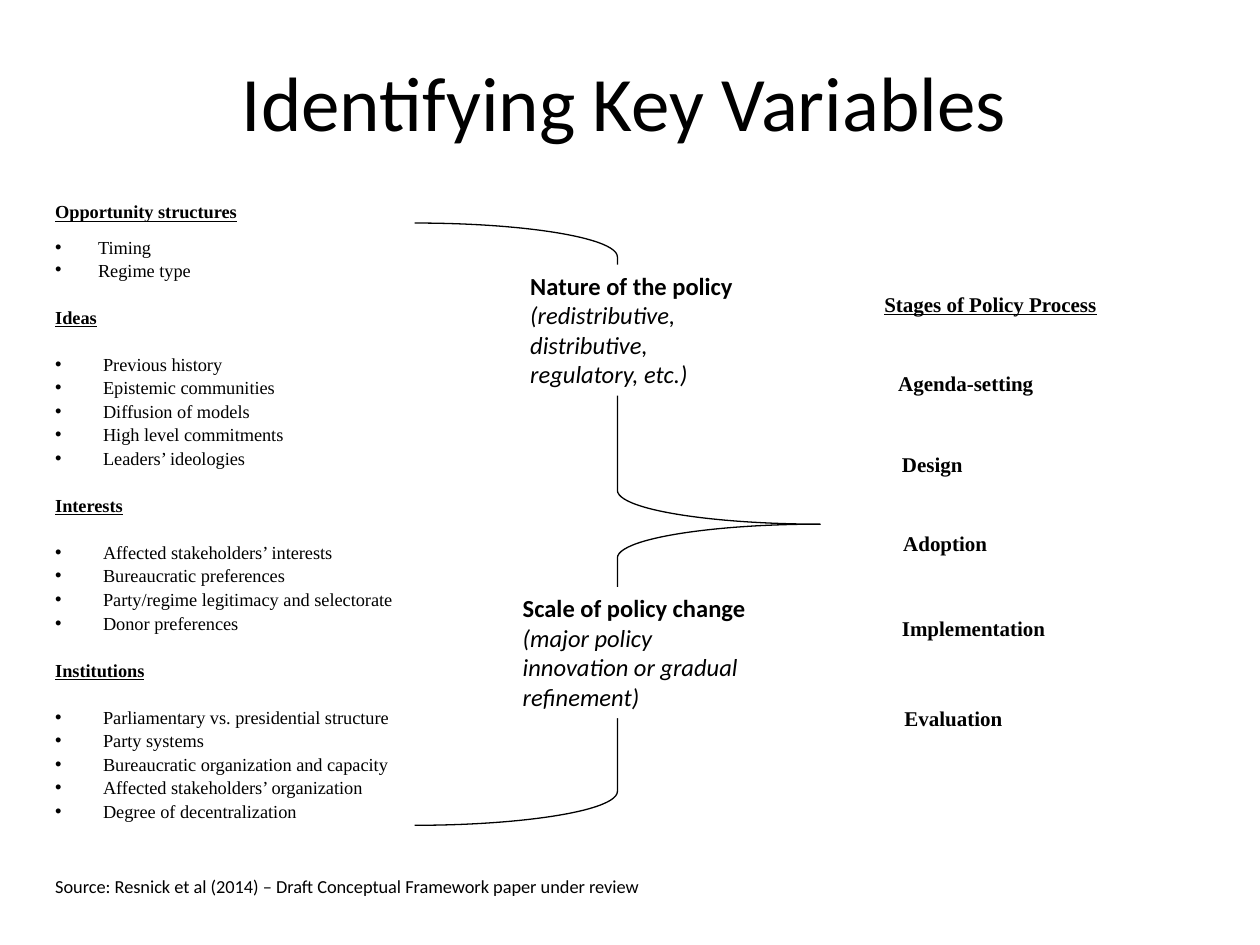
from dataclasses import dataclass

from lxml.etree import SubElement
from pptx import Presentation
from pptx.dml.color import RGBColor
from pptx.enum.shapes import MSO_SHAPE
from pptx.enum.text import MSO_ANCHOR, PP_ALIGN
from pptx.oxml.ns import qn
from pptx.util import Inches, Pt


@dataclass(frozen=True)
class Theme:
    ink: RGBColor = RGBColor(0, 0, 0)
    paper: RGBColor = RGBColor(255, 255, 255)
    sans: str = "Calibri"
    serif: str = "Times New Roman"
    title: float = 44
    callout: float = 14
    stage: float = 12
    body: float = 10.5
    hairline: float = 0.75
    leading: float = 1.07
    gap: float = 8
    blank_line: float = 13.4


class SlideBuilder:
    def __init__(self, slide, theme):
        self.slide = slide
        self.theme = theme

    def text_box(self, left, top, width, height, anchor=MSO_ANCHOR.TOP):
        box = self.slide.shapes.add_textbox(
            Inches(left), Inches(top), Inches(width), Inches(height))
        frame = box.text_frame
        frame.word_wrap = True
        frame.vertical_anchor = anchor
        return frame

    def panel(self, left, top, width, height):
        rect = self.slide.shapes.add_shape(
            MSO_SHAPE.RECTANGLE,
            Inches(left), Inches(top), Inches(width), Inches(height))
        rect.shadow.inherit = False
        rect.fill.solid()
        rect.fill.fore_color.rgb = self.theme.paper
        rect.line.fill.background()
        rect.text_frame.word_wrap = True
        rect.text_frame.vertical_anchor = MSO_ANCHOR.TOP
        return rect.text_frame

    def brace(self, left, top, width, height):
        brace = self.slide.shapes.add_shape(
            MSO_SHAPE.RIGHT_BRACE,
            Inches(left), Inches(top), Inches(width), Inches(height))
        brace.shadow.inherit = False
        brace.fill.background()
        brace.line.color.rgb = self.theme.ink
        brace.line.width = Pt(self.theme.hairline)

    def paragraph(self, frame, text, size, font, align=PP_ALIGN.LEFT, leading=None,
                  before=0, after=0, bold=False, italic=False, underline=False):
        first = frame.paragraphs[0]
        para = frame.add_paragraph() if first.runs else first
        para.alignment = align
        if leading:
            para.line_spacing = leading
        para.space_before = Pt(before)
        para.space_after = Pt(after)
        run = para.add_run()
        run.text = text
        run.font.size = Pt(size)
        run.font.name = font
        run.font.bold = bold
        run.font.italic = italic
        run.font.underline = underline
        run.font.color.rgb = self.theme.ink
        return para

    def bullet(self, frame, text, indent, leading=None, after=0):
        para = self.paragraph(frame, text, self.theme.body, self.theme.serif,
                              leading=leading, after=after)
        props = para._p.get_or_add_pPr()
        props.set("marL", str(Inches(indent)))
        props.set("indent", str(-Inches(indent)))
        SubElement(props, qn("a:buFont"), typeface="Arial")
        SubElement(props, qn("a:buChar"), char="•")

    def stage(self, text, left, top, width, height, underline=False):
        self.paragraph(self.panel(left, top, width, height), text,
                       self.theme.stage, self.theme.serif,
                       leading=self.theme.leading, after=self.theme.gap,
                       bold=True, underline=underline)

    def callout(self, heading, detail, left, top):
        frame = self.panel(left, top, 2.01, 1.04)
        self.paragraph(frame, heading, self.theme.callout, self.theme.sans, bold=True)
        self.paragraph(frame, detail, self.theme.callout, self.theme.sans, italic=True)


OPPORTUNITIES = ["Timing", "Regime type"]
VARIABLES = {
    "Ideas": ["Previous history", "Epistemic communities", "Diffusion of models",
              "High level commitments", "Leaders’ ideologies"],
    "Interests": ["Affected stakeholders’ interests", "Bureaucratic preferences",
                  "Party/regime legitimacy and selectorate", "Donor preferences"],
    "Institutions": ["Parliamentary vs. presidential structure", "Party systems",
                     "Bureaucratic organization and capacity",
                     "Affected stakeholders’ organization",
                     "Degree of decentralization"],
}
STAGES = [
    ("Agenda-setting", 7.03, 2.88, 1.31, 0.42),
    ("Design", 7.06, 3.52, 1.31, 0.42),
    ("Adoption", 7.07, 4.15, 1.31, 0.42),
    ("Implementation", 7.06, 4.82, 1.5, 0.46),
    ("Evaluation", 7.08, 5.54, 1.5, 0.46),
]


def main():
    theme = Theme()
    deck = Presentation()
    deck.slide_width, deck.slide_height = Inches(10), Inches(7.5)
    builder = SlideBuilder(deck.slides.add_slide(deck.slide_layouts[6]), theme)

    # Title
    title = builder.text_box(0.17, 0, 9.57, 1.59, MSO_ANCHOR.MIDDLE)
    builder.paragraph(title, "Identifying Key Variables", theme.title, theme.sans,
                      align=PP_ALIGN.CENTER)

    # Stages of the policy process
    for stage in STAGES:
        builder.stage(*stage)
    builder.stage("Stages of Policy Process", 6.92, 2.25, 2.03, 0.47, underline=True)

    # Variables, grouped under headings
    variables = builder.text_box(0.34, 1.22, 4.96, 6.28)
    variables.margin_top = Inches(0.36)
    heading_style = dict(size=theme.body, font=theme.serif, leading=theme.leading,
                         bold=True, underline=True)
    builder.paragraph(variables, "Opportunity structures", after=theme.gap,
                      **heading_style)
    for item in OPPORTUNITIES:
        builder.bullet(variables, item, 0.34)
    for heading, items in VARIABLES.items():
        builder.paragraph(variables, heading, before=theme.blank_line,
                          after=theme.blank_line, **heading_style)
        for item in items:
            builder.bullet(variables, item, 0.38, theme.leading)

    # Source line
    builder.paragraph(
        variables,
        "Source: Resnick et al (2014) – Draft Conceptual Framework paper under review",
        theme.body, theme.sans, leading=theme.leading,
        before=theme.blank_line + 2 * theme.gap, after=theme.gap)

    # Brace with the two mediating factors
    builder.brace(3.29, 1.77, 3.22, 4.78)
    builder.callout("Nature of the policy",
                    "(redistributive, distributive, regulatory, etc.)", 4.11, 2.1)
    builder.callout("Scale of policy change",
                    "(major policy innovation or gradual refinement)", 4.05, 4.66)

    deck.save("out.pptx")


if __name__ == "__main__":
    main()
